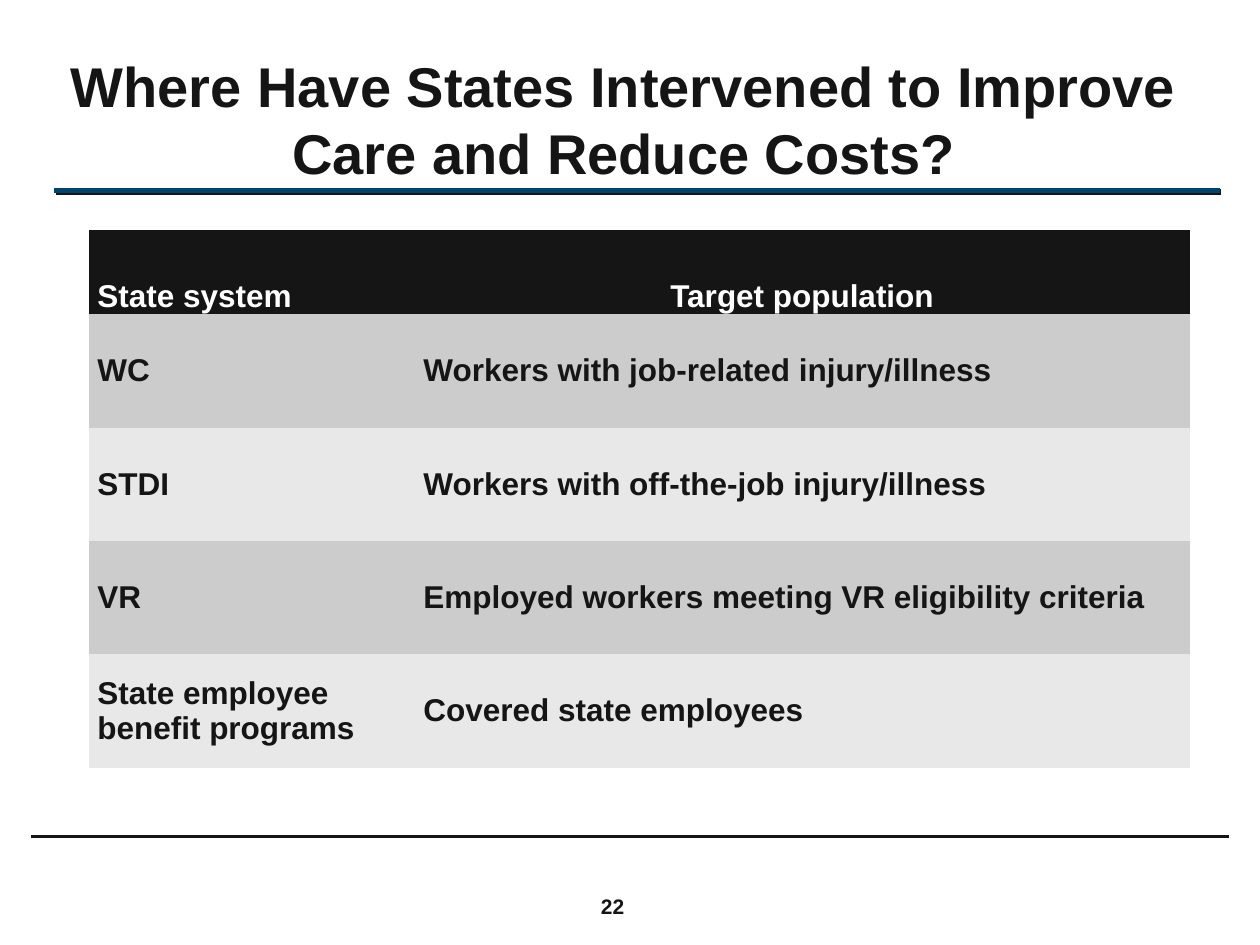
import pptx
import pptx.dml.color
import pptx.enum.shapes
import pptx.enum.text
import pptx.oxml.ns
import pptx.util
from lxml import etree

Pt = pptx.util.Pt
ANCHOR = pptx.enum.text.MSO_ANCHOR
ALIGN = pptx.enum.text.PP_ALIGN
INK = "151515"


def color(hex_string):
    return pptx.dml.color.RGBColor.from_string(hex_string)


def write(frame, text, size, ink=INK, align=ALIGN.LEFT):
    """Fill a text frame with one bold Arial paragraph."""
    frame.text = text
    frame.word_wrap = True
    para = frame.paragraphs[0]
    para.alignment = align
    font = para.runs[0].font
    font.name, font.size, font.bold = "Arial", Pt(size), True
    font.color.rgb = color(ink)


deck = pptx.Presentation()
deck.slide_width, deck.slide_height = Pt(720), Pt(540)
page = deck.slides.add_slide(deck.slide_layouts[6])

# Rules under the title and above the footer: left, right, y, colour, weight
rules = [(31, 697, 108.7, "00436E", 3), (17.5, 702.5, 478, INK, 1.5)]
effects = []
for left, right, y, ink, weight in rules:
    rule = page.shapes.add_connector(
        pptx.enum.shapes.MSO_CONNECTOR.STRAIGHT, Pt(left), Pt(y), Pt(right), Pt(y))
    rule.line.color.rgb = color(ink)
    rule.line.width = Pt(weight)
    properties = rule._element.spPr
    effects.append(etree.SubElement(properties, pptx.oxml.ns.qn("a:effectLst")))

# Hard shadow, down and to the right, on the title rule
shadow = etree.SubElement(effects[0], pptx.oxml.ns.qn("a:outerShdw"),
                          dist=str(Pt(1.4)), dir=str(45 * 60000), rotWithShape="0")
etree.SubElement(shadow, pptx.oxml.ns.qn("a:srgbClr"), val=INK)

title = page.shapes.add_textbox(Pt(24), Pt(19.5), Pt(665), Pt(90))
write(title.text_frame, "Where Have States Intervened to Improve Care and Reduce Costs?",
      32, align=ALIGN.CENTER)
title.text_frame.vertical_anchor = ANCHOR.BOTTOM

number = page.shapes.add_textbox(Pt(336.3), Pt(507), Pt(41), Pt(21.6))
write(number.text_frame, "22", 12)

rows = [
    ("State system", "Target population"),
    ("WC", "Workers with job-related injury/illness"),
    ("STDI", "Workers with off-the-job injury/illness"),
    ("VR", "Employed workers meeting VR eligibility criteria"),
    ("State employee benefit programs", "Covered state employees"),
]
header_height, row_height = 48.2, 64.8
column_widths = (186.3, 442.8)
table = page.shapes.add_table(
    len(rows), len(column_widths), Pt(50.7), Pt(131.3), Pt(sum(column_widths)),
    Pt(header_height + row_height * (len(rows) - 1))).table
for column, width in zip(table.columns, column_widths):
    column.width = Pt(width)

for row_index, texts in enumerate(rows):
    is_header = row_index == 0
    table.rows[row_index].height = Pt(header_height if is_header else row_height)
    fill = INK if is_header else ("E8E8E8", "CCCCCC")[row_index % 2]
    for column_index, text in enumerate(texts):
        cell = table.cell(row_index, column_index)
        cell.fill.solid()
        cell.fill.fore_color.rgb = color(fill)
        cell.margin_left = cell.margin_right = Pt(5)
        cell.margin_top = cell.margin_bottom = Pt(0)
        cell.vertical_anchor = ANCHOR.BOTTOM if is_header else ANCHOR.MIDDLE
        centered = is_header and column_index == 1
        write(cell.text_frame, text, 18, "FFFFFF" if is_header else INK,
              ALIGN.CENTER if centered else ALIGN.LEFT)

# Plain table style without grid lines
style = table._tbl.tblPr.find(pptx.oxml.ns.qn("a:tableStyleId"))
style.text = "{2D5ABB26-0587-4C30-8999-92F81FD0307C}"

deck.save("out.pptx")
